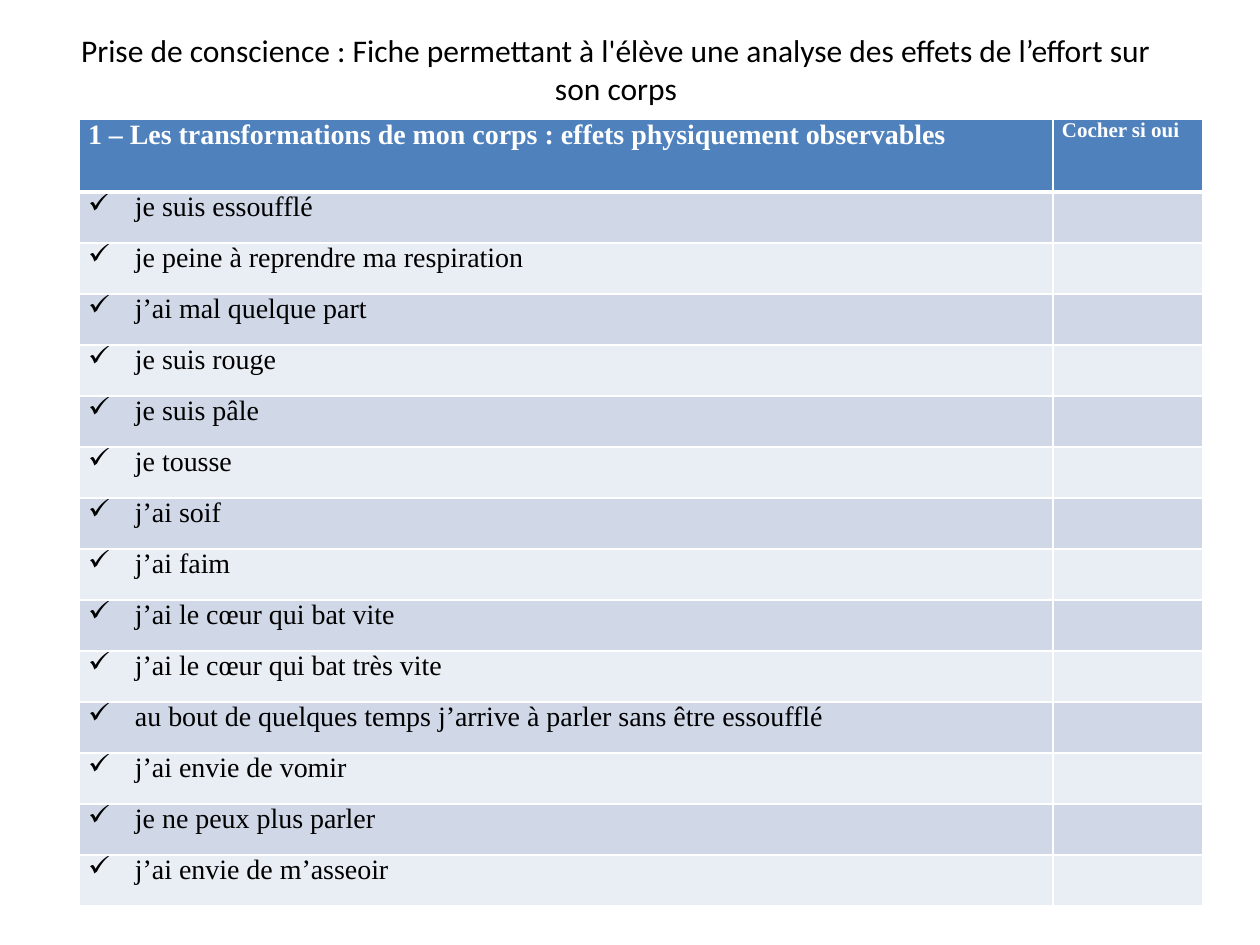
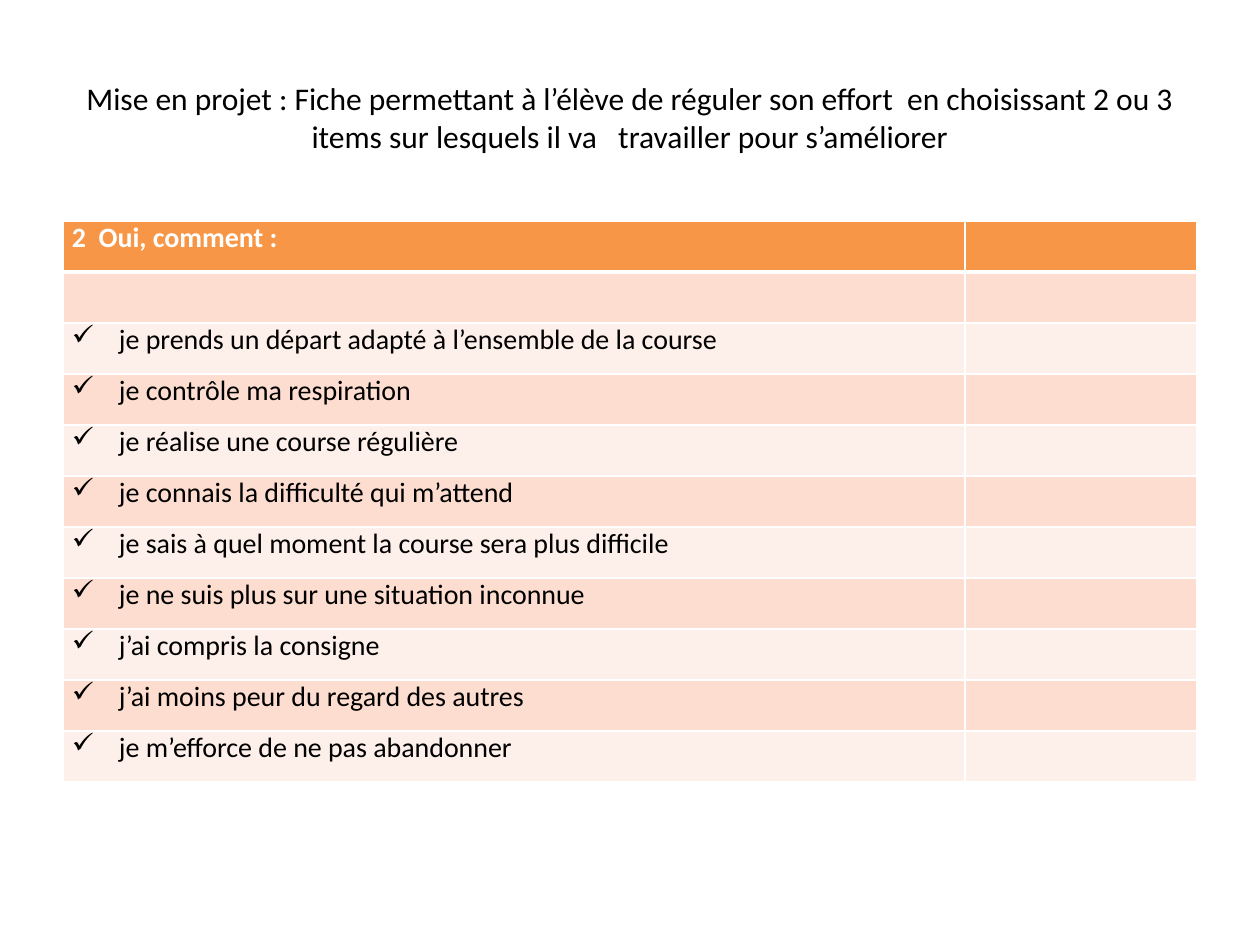
import pptx
import pptx.dml.color
import pptx.enum.text
import pptx.oxml.ns
import pptx.util
from lxml import etree

RGBColor = pptx.dml.color.RGBColor
BLACK = RGBColor(0x00, 0x00, 0x00)
WHITE = RGBColor(0xFF, 0xFF, 0xFF)
BLUE = RGBColor(0x4F, 0x81, 0xBD)
BLUE_BANDS = (RGBColor(0xD0, 0xD8, 0xE8), RGBColor(0xE9, 0xED, 0xF4))
ORANGE = RGBColor(0xF7, 0x96, 0x46)
ORANGE_BANDS = (RGBColor(0xFC, 0xDD, 0xCF), RGBColor(0xFD, 0xEF, 0xE9))

PX = 914400 / 126
ROW_HEIGHT = 51
CELL_INSET = 9
CHECK_INDENT = 47
TITLE_FONT = "Calibri"

SHEETS = [
    {
        "title": "Prise de conscience : Fiche permettant à l'élève une analyse des effets de l’effort sur son corps",
        "title_box": (49, 29, 1134, 79),
        "table_at": (79, 119),
        "columns": (974, 150),
        "header_height": 73,
        "header": (("1 – Les transformations de mon corps : effets physiquement observables", 16),
                   ("Cocher si oui", 12)),
        "items": (
            "je suis essoufflé",
            "je peine à reprendre ma respiration",
            "j’ai mal quelque part",
            "je suis rouge",
            "je suis pâle",
            "je tousse",
            "j’ai soif",
            "j’ai faim",
            "j’ai le cœur qui bat vite",
            "j’ai le cœur qui bat très vite",
            "au bout de quelques temps j’arrive à parler sans être essoufflé",
            "j’ai envie de vomir",
            "je ne peux plus parler",
            "j’ai envie de m’asseoir",
        ),
        "font": "Times New Roman",
        "header_fill": BLUE,
        "bands": BLUE_BANDS,
    },
    {
        "title": "Mise en projet : Fiche permettant à l’élève de réguler son effort  en choisissant 2 ou 3 items "
                 "sur lesquels il va   travailler pour s’améliorer",
        "title_box": (63, 38, 1134, 158),
        "table_at": (63, 221),
        "columns": (902, 232),
        "header_height": ROW_HEIGHT,
        "header": (("2  Oui, comment :", 16), ("", 16)),
        "items": (
            "",
            "je prends un départ adapté à l’ensemble de la course",
            "je contrôle ma respiration",
            "je réalise une course régulière",
            "je connais la difficulté qui m’attend",
            "je sais à quel moment la course sera plus difficile",
            "je ne suis plus sur une situation inconnue",
            "j’ai compris la consigne",
            "j’ai moins peur du regard des autres",
            "je m’efforce de ne pas abandonner",
        ),
        "font": "Calibri",
        "header_fill": ORANGE,
        "bands": ORANGE_BANDS,
    },
]


def emu(px):
    return pptx.util.Emu(round(px * PX))


def add_white_border(cell, side, points):
    """Side is one of L, R, T, B; call in that order, before the cell is filled."""
    qn = pptx.oxml.ns.qn
    line = etree.SubElement(cell._tc.get_or_add_tcPr(), qn(f"a:ln{side}"), w=str(pptx.util.Pt(points)))
    solid = etree.SubElement(line, qn("a:solidFill"))
    etree.SubElement(solid, qn("a:srgbClr"), val=str(WHITE))


deck = pptx.Presentation()
deck.slide_width = emu(1260)
deck.slide_height = emu(945)

for sheet in SHEETS:
    page = deck.slides.add_slide(deck.slide_layouts[6])

    box = page.shapes.add_textbox(*map(emu, sheet["title_box"]))
    frame = box.text_frame
    frame.word_wrap = True
    frame.vertical_anchor = pptx.enum.text.MSO_ANCHOR.MIDDLE
    para = frame.paragraphs[0]
    para.alignment = pptx.enum.text.PP_ALIGN.CENTER
    span = para.add_run()
    span.text = sheet["title"]
    span.font.name = TITLE_FONT
    span.font.size = pptx.util.Pt(18)
    span.font.color.rgb = BLACK

    rows = [sheet["header"]] + [((item, 16), ("", 16)) for item in sheet["items"]]
    left, top = sheet["table_at"]
    height = sheet["header_height"] + ROW_HEIGHT * len(sheet["items"])
    table = page.shapes.add_table(len(rows), len(sheet["columns"]), emu(left), emu(top),
                                  emu(sum(sheet["columns"])), emu(height)).table
    table.first_row = True
    table.horz_banding = False
    for column, width in zip(table.columns, sheet["columns"]):
        column.width = emu(width)

    for row_index, row in enumerate(rows):
        is_header = row_index == 0
        table.rows[row_index].height = emu(sheet["header_height"] if is_header else ROW_HEIGHT)
        for column_index, (text, size) in enumerate(row):
            cell = table.cell(row_index, column_index)
            cell.margin_left = cell.margin_right = emu(CELL_INSET)
            cell.margin_top = cell.margin_bottom = 0
            for side in "LRTB":
                under_header = (row_index, side) in ((0, "B"), (1, "T"))
                add_white_border(cell, side, 3 if under_header else 1)
            cell.fill.solid()
            cell.fill.fore_color.rgb = sheet["header_fill"] if is_header else sheet["bands"][(row_index - 1) % 2]

            para = cell.text_frame.paragraphs[0]
            if not text:
                para.font.size = pptx.util.Pt(size)
                continue
            if not is_header:
                properties = para._p.get_or_add_pPr()
                properties.set("marL", str(emu(CHECK_INDENT)))
                properties.set("indent", str(-emu(CHECK_INDENT)))
                etree.SubElement(properties, pptx.oxml.ns.qn("a:buChar"), char="✓")
            span = para.add_run()
            span.text = text
            span.font.name = sheet["font"]
            span.font.size = pptx.util.Pt(size)
            span.font.bold = is_header
            span.font.color.rgb = WHITE if is_header else BLACK

deck.save("out.pptx")
